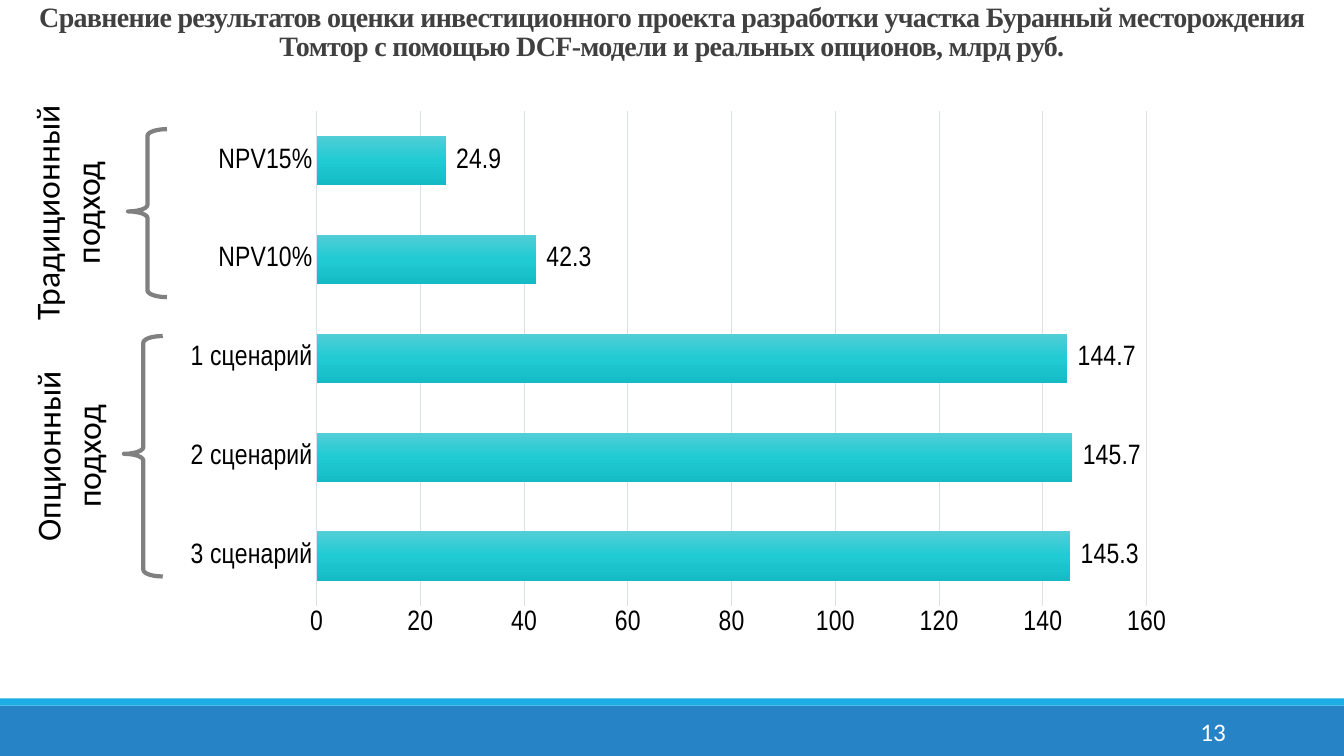
from copy import deepcopy

from pptx import Presentation
from pptx.chart.data import CategoryChartData
from pptx.dml.color import RGBColor
from pptx.enum.chart import XL_CHART_TYPE, XL_LABEL_POSITION, XL_TICK_MARK
from pptx.enum.shapes import MSO_SHAPE
from pptx.enum.text import MSO_ANCHOR, MSO_AUTO_SIZE, PP_ALIGN
from pptx.oxml import parse_xml
from pptx.oxml.ns import nsdecls, qn
from pptx.util import Pt

PX = 9525


def box(*lengths):
    """Turn lengths in px into EMU."""
    return [n * PX for n in lengths]


def style(font, name, size, color):
    font.name, font.size = name, Pt(size)
    font.color.rgb = RGBColor.from_string(color)


prs = Presentation()
prs.slide_width, prs.slide_height = box(1280, 720)
s = prs.slides.add_slide(prs.slide_layouts[5])

# Footer bands and slide number
for top, height, color in [(672, 48, "2683C6"), (665, 7, "1CADE4")]:
    sp = s.shapes.add_shape(MSO_SHAPE.RECTANGLE, *box(0, top, 1280, height))
    sp.shadow.inherit = False
    sp.fill.solid()
    sp.fill.fore_color.rgb = RGBColor.from_string(color)
    sp.line.fill.background()

tf = s.shapes.add_textbox(*box(1040, 678, 137, 38)).text_frame
tf.word_wrap = True
tf.vertical_anchor = MSO_ANCHOR.MIDDLE
p = tf.paragraphs[0]
p.alignment = PP_ALIGN.RIGHT
r = p.add_run()
r.text = "13"
style(r.font, "Calibri", 18, "FFFFFF")

# Title
title = s.shapes.title
title.left, title.top, title.width, title.height = box(17, 0, 1245, 70)
tf = title.text_frame
tf.word_wrap = True
tf.auto_size = MSO_AUTO_SIZE.NONE
tf.vertical_anchor = MSO_ANCHOR.TOP
p = tf.paragraphs[0]
p.alignment = PP_ALIGN.CENTER
p.line_spacing = 0.85
r = p.add_run()
r.text = ("Сравнение результатов оценки инвестиционного проекта разработки участка "
          "Буранный месторождения Томтор с помощью DCF-модели и реальных опционов, млрд руб.")
style(r.font, "Times New Roman", 20, "404040")
r.font.bold = True
r.font._element.set("spc", "-50")

# Bar chart
data = CategoryChartData()
data.categories = ["3 сценарий", "2 сценарий", "1 сценарий", "NPV10%", "NPV15%"]
data.add_series("Series 1", [145.3, 145.7, 144.7, 42.3, 24.9])
chart = s.shapes.add_chart(XL_CHART_TYPE.BAR_CLUSTERED, *box(156, 90, 970, 535), data).chart
chart.has_legend = False
chart.has_title = False
style(chart.font, "Arial Narrow", 20, "000000")

cat_axis, val_axis = chart.category_axis, chart.value_axis
for axis in (cat_axis, val_axis):
    axis.major_tick_mark = axis.minor_tick_mark = XL_TICK_MARK.NONE
    style(axis.tick_labels.font, "Arial Narrow", 20, "000000")
val_axis.minimum_scale, val_axis.maximum_scale, val_axis.major_unit = 0, 160, 20
val_axis.tick_labels.number_format = "#,##0"
val_axis.tick_labels.number_format_is_linked = False
val_axis.has_major_gridlines = True
val_axis.format.line.fill.background()
for line in (cat_axis.format.line, val_axis.major_gridlines.format.line):
    line.color.rgb = RGBColor.from_string("DCE0ED")
    line.width = Pt(0.75)

plot = chart.plots[0]
plot.gap_width = 100
plot.vary_by_categories = False
plot.has_data_labels = True
labels = plot.data_labels
labels.show_value = True
labels.position = XL_LABEL_POSITION.OUTSIDE_END
labels.number_format = r"#\ ##0.0"
labels.number_format_is_linked = False
style(labels.font, "Arial Narrow", 20, "000000")

series = plot.series[0]
fill = series.format.fill
fill.gradient()
fill.gradient_angle = 270
stop_list = next(series._element.iter(qn("a:gsLst")))
stop_list.append(deepcopy(stop_list[-1]))
for stop, position, color in zip(fill.gradient_stops, (0, 0.5, 1), ("51CED6", "20CBD4", "15BBC4")):
    stop.position = position
    stop.color.rgb = RGBColor.from_string(color)

plot_area = chart._chartSpace.chart.plotArea
for old in plot_area.findall(qn("c:layout")):
    plot_area.remove(old)
plot_area.insert(0, parse_xml(
    f'<c:layout {nsdecls("c")}><c:manualLayout><c:layoutTarget val="inner"/>'
    '<c:xMode val="edge"/><c:yMode val="edge"/><c:x val="0.15"/><c:y val="0.03"/>'
    '<c:w val="0.815"/><c:h val="0.88"/></c:manualLayout></c:layout>'))

# Approach captions with their braces
approaches = [
    ("Традиционный подход", (-53, 159, 233, 87), (122, 123, 37, 160)),
    ("Опционный подход", (-28, 391, 185, 87), (118, 320, 37, 229)),
]
for caption, caption_box, brace_box in approaches:
    sp = s.shapes.add_shape(MSO_SHAPE.LEFT_BRACE, *box(*brace_box))
    sp.shadow.inherit = False
    sp.adjustments[0], sp.adjustments[1] = 0.17, 0.49
    sp.fill.background()
    sp.line.color.rgb = RGBColor.from_string("808080")
    sp.line.width = Pt(3)

    sp = s.shapes.add_textbox(*box(*caption_box))
    sp.rotation = 270
    tf = sp.text_frame
    tf.word_wrap = True
    tf.auto_size = MSO_AUTO_SIZE.SHAPE_TO_FIT_TEXT
    p = tf.paragraphs[0]
    p.alignment = PP_ALIGN.CENTER
    r = p.add_run()
    r.text = caption
    style(r.font, "Calibri", 24, "000000")

prs.save("out.pptx")
